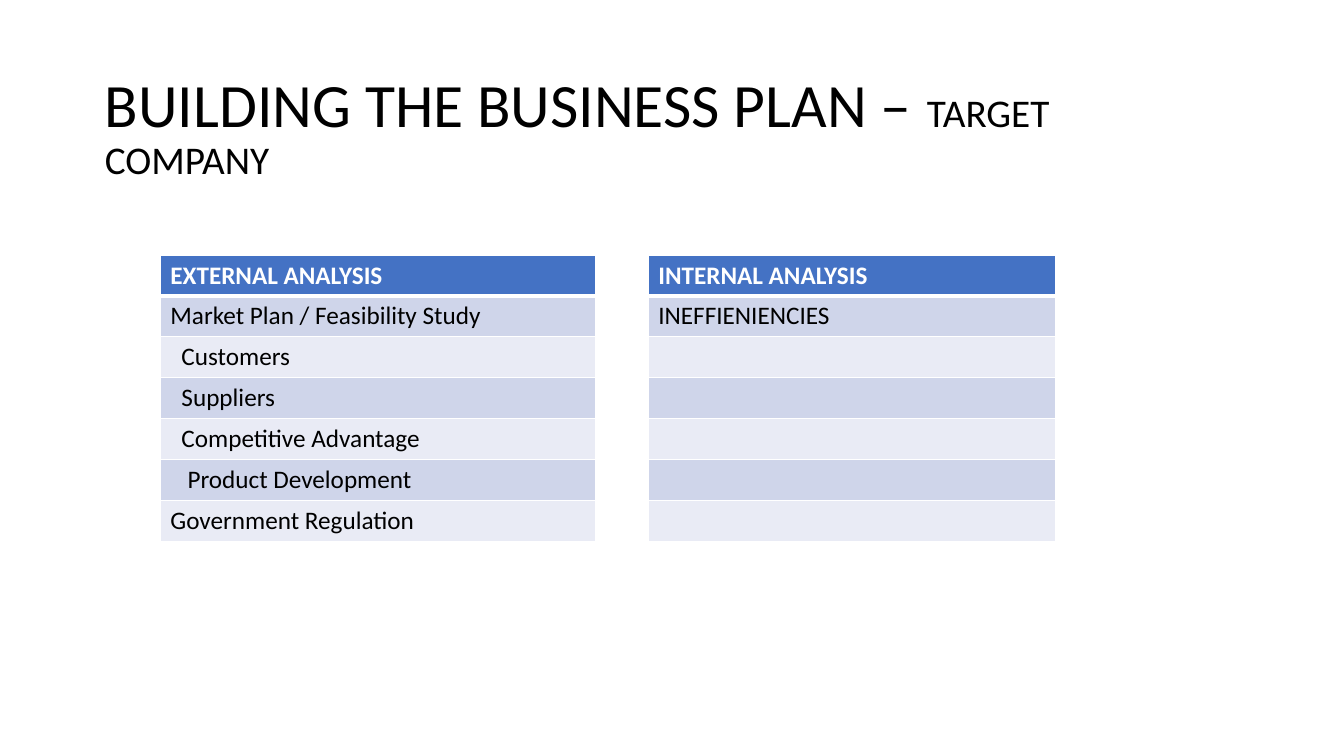
from lxml.etree import SubElement
from pptx import Presentation
from pptx.dml.color import RGBColor
from pptx.enum.text import MSO_ANCHOR, MSO_AUTO_SIZE, PP_ALIGN
from pptx.oxml.ns import qn
from pptx.util import Inches, Pt

BLACK = RGBColor(0x00, 0x00, 0x00)
WHITE = RGBColor(0xFF, 0xFF, 0xFF)
BLUE = RGBColor(0x44, 0x72, 0xC4)
BAND_DARK = RGBColor(0xCF, 0xD5, 0xEA)
BAND_LIGHT = RGBColor(0xE9, 0xEB, 0xF5)

ROWS = [
    ("EXTERNAL ANALYSIS", 0, "INTERNAL ANALYSIS"),
    ("Market Plan / Feasibility Study", 0, "INEFFIENIENCIES"),
    ("Customers", 0.11, ""),
    ("Suppliers", 0.11, ""),
    ("Competitive Advantage", 0.11, ""),
    ("Product Development", 0.17, ""),
    ("Government Regulation", 0, ""),
]
COL_WIDTHS = [4.32, 0.52, 4.04]
ROW_HEIGHT = 0.405


def add_text(p, text, font="Calibri", size=18, color=BLACK, bold=False):
    r = p.add_run()
    r.text = text
    r.font.name = font
    r.font.size = Pt(size)
    r.font.color.rgb = color
    r.font.bold = bold


class SlideBuilder:
    def __init__(self, prs):
        self.s = prs.slides.add_slide(prs.slide_layouts[5])

    def title(self, parts, left, top, width, height):
        sp = self.s.shapes.title
        sp.left, sp.top = Inches(left), Inches(top)
        sp.width, sp.height = Inches(width), Inches(height)
        tf = sp.text_frame
        tf.word_wrap = True
        tf.auto_size = MSO_AUTO_SIZE.NONE
        tf.vertical_anchor = MSO_ANCHOR.BOTTOM
        p = tf.paragraphs[0]
        p.alignment = PP_ALIGN.LEFT
        p.line_spacing = 0.9
        for text, size in parts:
            add_text(p, text, size=size)

    def borders(self, cell, bottom):
        tc_pr = cell._tc.get_or_add_tcPr()
        widths = {"a:lnL": 1, "a:lnR": 1, "a:lnT": 1, "a:lnB": bottom}
        for i, (tag, width) in enumerate(widths.items()):
            ln = SubElement(tc_pr, qn(tag), w=str(Pt(width)))
            fill = SubElement(ln, qn("a:solidFill"))
            SubElement(fill, qn("a:srgbClr"), val=str(WHITE))
            tc_pr.insert(i, ln)

    def cell(self, cell, text, row, fill, indent=0):
        header = row == 0
        self.borders(cell, 3 if header else 1)
        if fill is None:
            cell.fill.background()
        else:
            cell.fill.solid()
            cell.fill.fore_color.rgb = fill
        cell.margin_left = Inches(0.1 + indent)
        if text:
            add_text(cell.text_frame.paragraphs[0], text,
                     color=WHITE if header else BLACK, bold=header)

    def analysis_table(self, rows, left, top):
        sp = self.s.shapes.add_table(
            len(rows), len(COL_WIDTHS), Inches(left), Inches(top),
            Inches(sum(COL_WIDTHS)), Inches(ROW_HEIGHT * len(rows)))
        table = sp.table
        table.horz_banding = False
        for col, width in zip(table.columns, COL_WIDTHS):
            col.width = Inches(width)
        for i, (external, indent, internal) in enumerate(rows):
            fill = BLUE if i == 0 else BAND_DARK if i % 2 else BAND_LIGHT
            self.cell(table.cell(i, 0), external, i, fill, indent)
            self.cell(table.cell(i, 1), "", i, None)
            self.cell(table.cell(i, 2), internal, i, fill)


def main():
    prs = Presentation()
    prs.slide_width, prs.slide_height = Inches(13.33), Inches(7.5)
    builder = SlideBuilder(prs)
    builder.title([("BUILDING THE BUSINESS PLAN – ", 44), ("TARGET COMPANY", 28)],
                  0.94, 0.28, 11, 1.59)
    builder.analysis_table(ROWS, 1.59, 2.53)
    prs.save("out.pptx")


if __name__ == "__main__":
    main()
